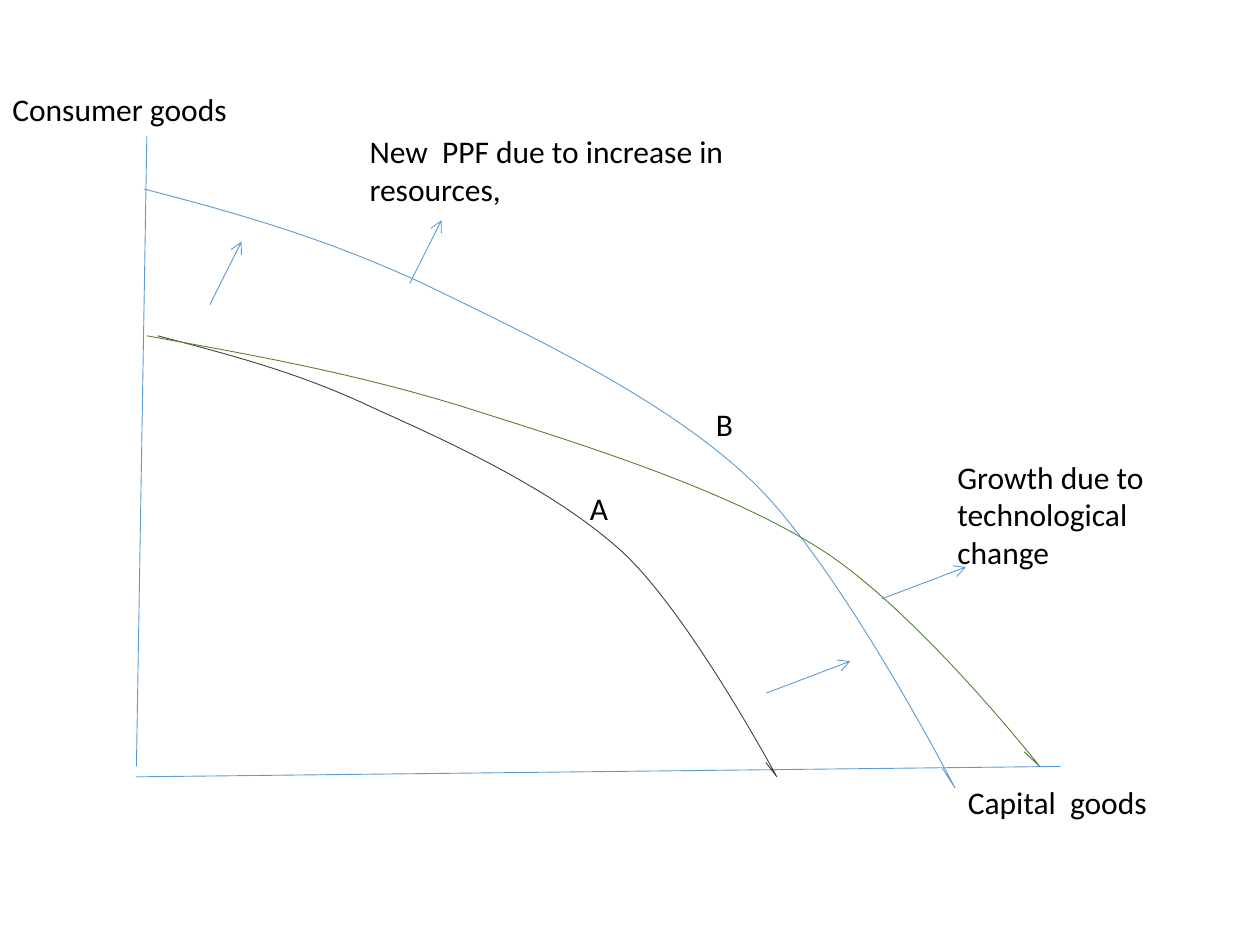
from dataclasses import dataclass

from lxml.etree import SubElement
from pptx import Presentation
from pptx.dml.color import RGBColor
from pptx.enum.shapes import MSO_CONNECTOR
from pptx.enum.text import MSO_AUTO_SIZE
from pptx.oxml.ns import qn
from pptx.oxml.xmlchemy import OxmlElement
from pptx.util import Cm, Pt


@dataclass(frozen=True)
class Theme:
    font: str = "Calibri"
    text_size: float = 18
    line_width: float = 0.5
    text: str = "000000"
    blue: str = "5B9BD5"
    dark: str = "404040"
    green: str = "548235"


THEME = Theme()

# All lengths below are in centimetres.
AXES = [
    ((2.96, 2.75), (2.75, 15.45)),
    ((2.75, 15.66), (21.38, 15.45)),
]

# Each frontier: colour, Bézier points (start, then control, control, end), hook.
FRONTIERS = [
    (THEME.blue,
     [(2.9, 3.81), (4.75, 4.29), (6.58, 4.8), (8.64, 5.77), (10.67, 6.76),
      (13.41, 8.03), (15.16, 9.7), (16.94, 11.4), (19.25, 15.88), (19.25, 15.88)],
     (19, 15.49)),
    (THEME.dark,
     [(3.18, 6.77), (4.57, 7.14), (5.99, 7.49), (7.54, 8.23), (9.12, 8.94),
      (11.18, 9.88), (12.55, 11.13), (13.89, 12.37), (15.66, 15.66), (15.66, 15.66)],
     (15.44, 15.37)),
    (THEME.green,
     [(2.96, 6.77), (4.98, 7.14), (7.01, 7.49), (9.27, 8.18), (11.51, 8.89),
      (14.5, 9.8), (16.46, 11.02), (18.42, 12.22), (20.96, 15.45), (20.96, 15.45)],
     (20.65, 15.16)),
]

UPWARD, OUTWARD = (0.64, -1.27), (1.69, -0.64)
SHIFTS = [
    ((4.23, 6.14), UPWARD),
    ((15.45, 13.97), OUTWARD),
    ((17.78, 12.07), OUTWARD),
    ((8.26, 5.71), UPWARD),
]

# Each label: wording, left, top, width, height.
LABELS = [
    ("Consumer goods", 0, 1.7, 4.88, 1.07),
    ("Capital  goods", 19.26, 15.67, 4.88, 1.07),
    ("Growth due to technological change", 19.05, 9.1, 4.88, 2.57),
    ("New  PPF due to increase in resources,", 7.2, 2.54, 9.09, 1.8),
    ("A", 11.64, 9.73, 2.11, 1.02),
    ("B", 14.18, 8.05, 2.11, 1.02),
]


def style_line(line, color):
    line.color.rgb = RGBColor.from_string(color)
    line.width = Pt(THEME.line_width)


def add_line(slide, start, end, arrow=False):
    connector = slide.shapes.add_connector(
        MSO_CONNECTOR.STRAIGHT, *map(Cm, start + end))
    style_line(connector.line, THEME.blue)
    properties = connector._element.spPr
    if arrow:
        SubElement(properties.find(qn("a:ln")), qn("a:tailEnd"), type="arrow")
    SubElement(properties, qn("a:effectLst"))


def bend_segments(freeform, curve_points):
    """Turn the first curve_points straight segments into cubic curves, three to each."""
    segments = list(freeform._element.iter(qn("a:lnTo")))[:curve_points]
    for first in range(0, curve_points, 3):
        curve = OxmlElement("a:cubicBezTo")
        segments[first].addprevious(curve)
        for segment in segments[first:first + 3]:
            curve.append(segment[0])
            segment.getparent().remove(segment)


def add_frontier(slide, color, controls, hook):
    start, *curve_points = controls
    vertices = curve_points + [curve_points[-1], hook]
    builder = slide.shapes.build_freeform(*map(Cm, start))
    builder.add_line_segments([(Cm(x), Cm(y)) for x, y in vertices], close=False)
    frontier = builder.convert_to_shape()
    bend_segments(frontier, len(curve_points))
    frontier.fill.background()
    frontier.shadow.inherit = False
    style_line(frontier.line, color)


def add_label(slide, wording, *box):
    frame = slide.shapes.add_textbox(*map(Cm, box)).text_frame
    frame.word_wrap = True
    frame.auto_size = MSO_AUTO_SIZE.SHAPE_TO_FIT_TEXT
    paragraph = frame.paragraphs[0]
    paragraph.text = wording
    paragraph.font.name = THEME.font
    paragraph.font.size = Pt(THEME.text_size)
    paragraph.font.color.rgb = RGBColor.from_string(THEME.text)


def main():
    deck = Presentation()
    deck.slide_width, deck.slide_height = Cm(25.4), Cm(19.05)
    slide = deck.slides.add_slide(deck.slide_layouts[6])
    for start, end in AXES:
        add_line(slide, start, end)
    for frontier in FRONTIERS:
        add_frontier(slide, *frontier)
    for (x, y), (dx, dy) in SHIFTS:
        add_line(slide, (x, y), (x + dx, y + dy), arrow=True)
    for label in LABELS:
        add_label(slide, *label)
    deck.save("out.pptx")


if __name__ == "__main__":
    main()
